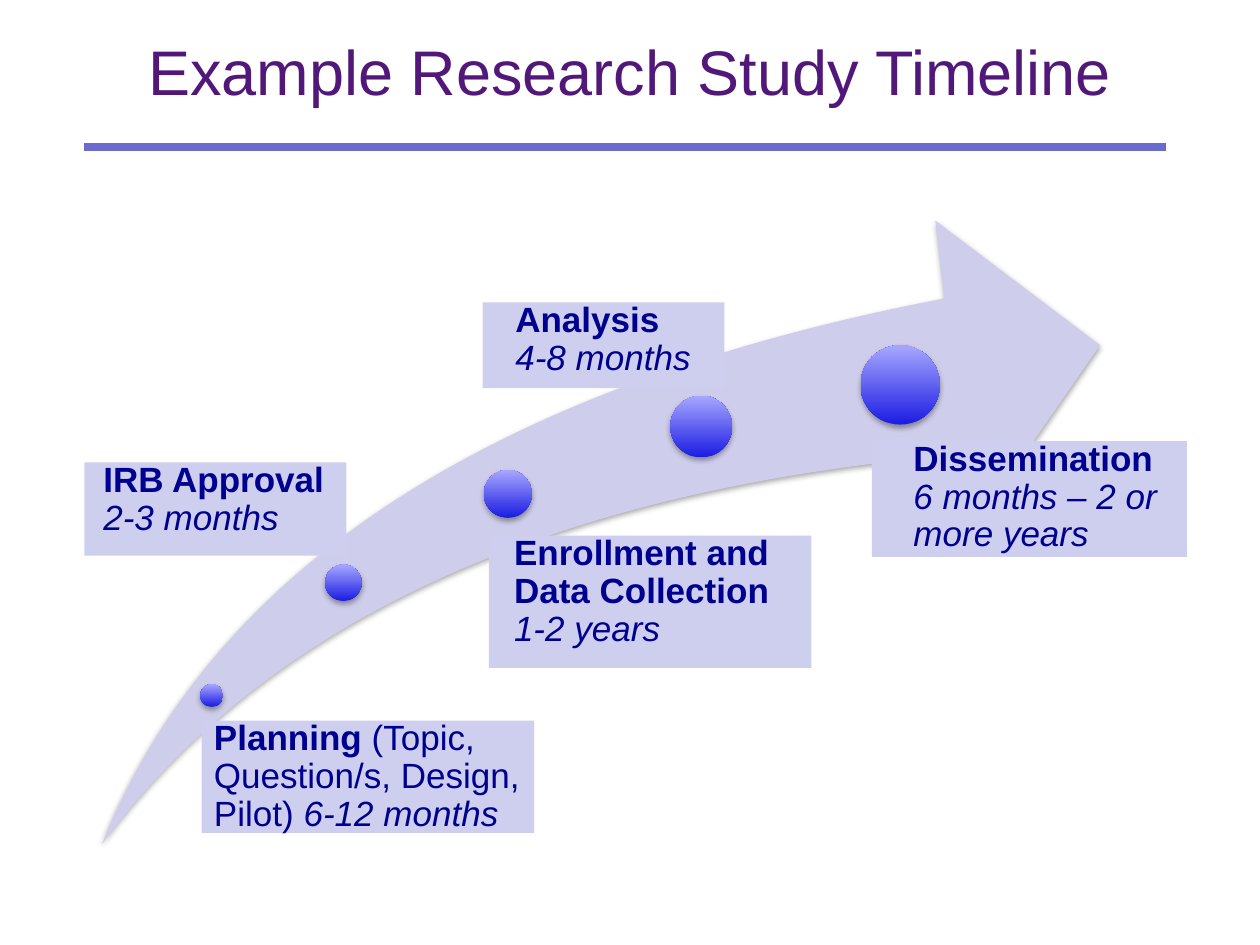
from dataclasses import dataclass

import pptx
import pptx.dml.color
import pptx.enum.shapes
import pptx.enum.text
import pptx.oxml
import pptx.oxml.ns
import pptx.util
from lxml import etree

SHAPE = pptx.enum.shapes.MSO_SHAPE
ALIGN = pptx.enum.text.PP_ALIGN
COLUMNS, ROWS = 100, 75


@dataclass(frozen=True)
class Theme:
    font: str = "Arial"
    title_size: int = 36
    label_size: int = 20
    title: str = "511879"
    rule: str = "6B6BCF"
    arrow: str = "CECEEC"
    label_fill: str = "CECEEF"
    label_text: str = "000090"
    dot_dark: str = "1C1CE3"
    dot_light: str = "A7A7FF"


def rgb(value):
    return pptx.dml.color.RGBColor.from_string(value)


def write(tf, paragraphs, font, size, color, spacing, align=ALIGN.LEFT, inset=(0.1, 0, 0, 0)):
    """Fill a text frame; each paragraph is a list of (text, style) runs."""
    tf.word_wrap = True
    tf.vertical_anchor = pptx.enum.text.MSO_ANCHOR.TOP
    tf.margin_left, tf.margin_top, tf.margin_right, tf.margin_bottom = map(pptx.util.Inches, inset)
    for i, runs in enumerate(paragraphs):
        p = tf.add_paragraph() if i else tf.paragraphs[0]
        p.alignment, p.line_spacing = align, spacing
        for text, style in runs:
            r = p.add_run()
            r.text = text
            r.font.name, r.font.size = font, pptx.util.Pt(size)
            r.font.color.rgb = rgb(color)
            r.font.bold, r.font.italic = style == "bold", style == "italic"


class Deck:
    def __init__(self, theme):
        self.theme = theme
        self.prs = pptx.Presentation()
        self.prs.slide_width = pptx.util.Inches(10)
        self.prs.slide_height = pptx.util.Inches(7.5)
        self.s = self.prs.slides.add_slide(self.prs.slide_layouts[6])

    def x(self, columns):
        return round(self.prs.slide_width * columns / COLUMNS)

    def y(self, rows):
        return round(self.prs.slide_height * rows / ROWS)

    def box(self, left, top, width, height):
        return self.x(left), self.y(top), self.x(width), self.y(height)

    def shape(self, kind, *box):
        sp = self.s.shapes.add_shape(kind, *self.box(*box))
        sp.shadow.inherit = False
        sp.line.fill.background()
        return sp

    def soft_shadow(self, sp):
        effects = sp._element.spPr.find(pptx.oxml.ns.qn("a:effectLst"))
        effects.append(pptx.oxml.parse_xml(
            f'<a:outerShdw {pptx.oxml.ns.nsdecls("a")} blurRad="{pptx.util.Pt(3.1)}" '
            f'dist="{pptx.util.Pt(1.8)}" dir="5400000" rotWithShape="0">'
            '<a:srgbClr val="000000"><a:alpha val="35000"/></a:srgbClr></a:outerShdw>'))

    def title(self, text, *box):
        t = self.theme
        sp = self.s.shapes.add_textbox(*self.box(*box))
        write(sp.text_frame, [[(text, "")]], t.font, t.title_size, t.title, 0.85,
              align=ALIGN.CENTER, inset=(0.1, 0.05, 0.1, 0.05))

    def rule(self, left, right, row):
        line = self.s.shapes.add_connector(
            pptx.enum.shapes.MSO_CONNECTOR.STRAIGHT,
            self.x(left), self.y(row), self.x(right), self.y(row))
        line.line.color.rgb = rgb(self.theme.rule)
        line.line.width = pptx.util.Pt(4.5)
        etree.SubElement(line._element.spPr, pptx.oxml.ns.qn("a:effectLst"))

    def arrow(self, *box):
        sp = self.shape(SHAPE.SWOOSH_ARROW, *box)
        sp.adjustments[0] = sp.adjustments[1] = 0.25
        sp.fill.solid()
        sp.fill.fore_color.rgb = rgb(self.theme.arrow)
        self.soft_shadow(sp)

    def dot(self, left, top, size):
        sp = self.shape(SHAPE.OVAL, left, top, size, size)
        sp.fill.gradient()
        sp.fill.gradient_angle = 90
        for stop, color in zip(sp.fill.gradient_stops, (self.theme.dot_dark, self.theme.dot_light)):
            stop.color.rgb = rgb(color)
        self.soft_shadow(sp)

    def label(self, box, indent, paragraphs):
        t = self.theme
        sp = self.shape(SHAPE.RECTANGLE, *box)
        sp.fill.solid()
        sp.fill.fore_color.rgb = rgb(t.label_fill)
        write(sp.text_frame, paragraphs, t.font, t.label_size, t.label_text, 0.9,
              inset=(indent, 0, 0, 0))


def phase(name, duration):
    return [[(name, "bold")], [(duration, "italic")]]


# Each stage: dot (left, top, size), label box, label indent, label text
STAGES = [
    ((15.9, 54.3, 1.8), (16, 57.2, 26.4, 8.9), 0.1,
     [[("Planning ", "bold"), ("(Topic, Question/s, Design, Pilot) ", ""),
       ("6-12 months", "italic")]]),
    ((25.8, 44.8, 2.9), (6.7, 36.7, 20.8, 7.4), 0.15, phase("IRB Approval", "2-3 months")),
    ((38.4, 37.3, 3.8), (38.8, 42.5, 25.6, 10.5), 0.2,
     phase("Enrollment and Data Collection", "1-2 years")),
    ((53.2, 31.4, 4.9), (38.3, 24, 19.2, 6.8), 0.26, phase("Analysis", "4-8 months")),
    ((68.3, 27.4, 6.3), (69.2, 35, 25, 9.2), 0.33,
     phase("Dissemination", "6 months – 2 or more years")),
]


def main():
    deck = Deck(Theme())
    deck.title("Example Research Study Timeline", 5, 3, 90, 12.5)
    deck.arrow(8.1, 17.5, 79.2, 49.5)
    for dot, box, indent, paragraphs in STAGES:
        deck.dot(*dot)
        deck.label(box, indent, paragraphs)
    deck.rule(6.7, 92.5, 11.7)
    deck.prs.save("out.pptx")


if __name__ == "__main__":
    main()
